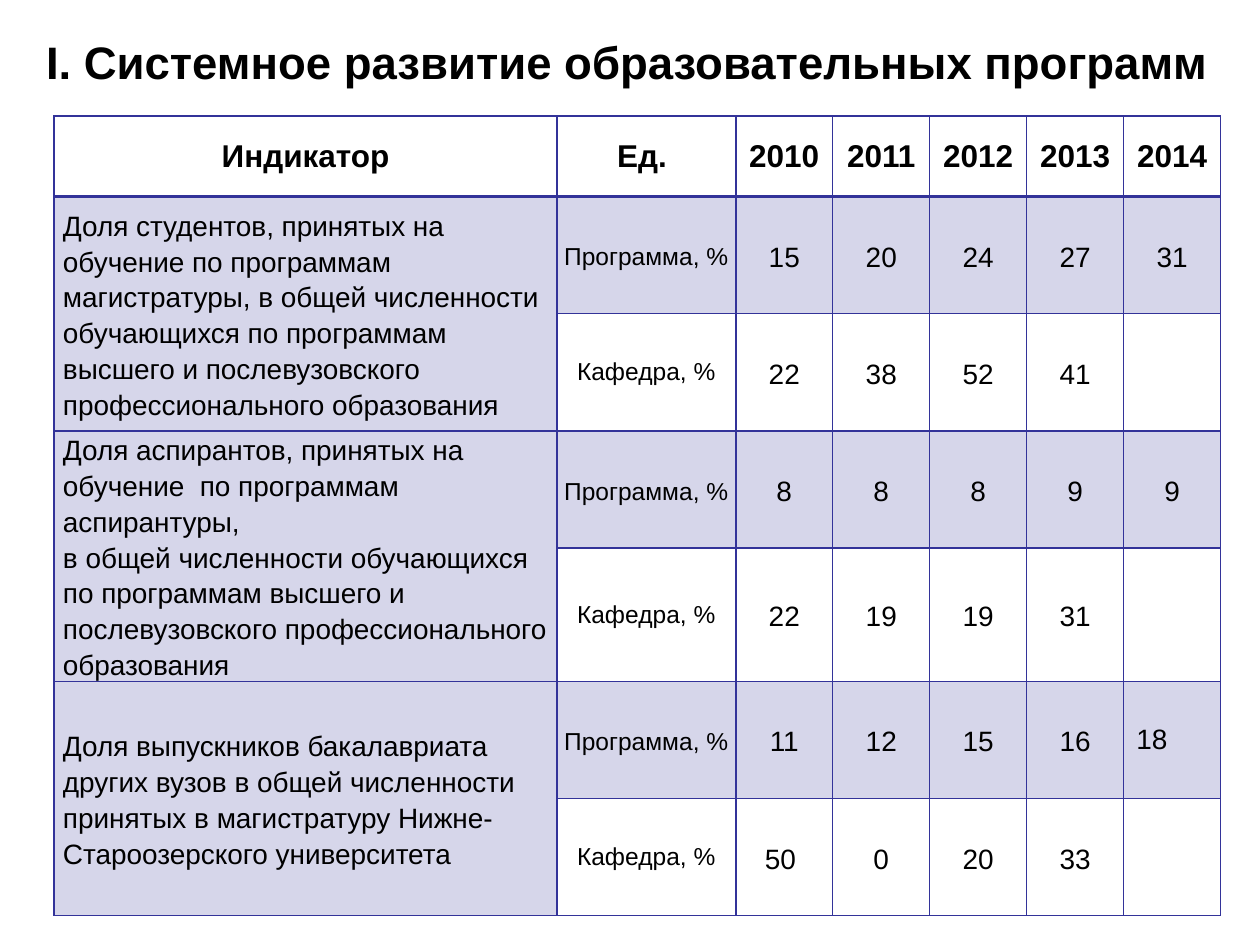
from copy import deepcopy

from lxml import etree
from pptx import Presentation
from pptx.dml.color import RGBColor
from pptx.enum import text as t
from pptx.oxml import ns
from pptx.util import Inches, Pt

BLACK = RGBColor(0x00, 0x00, 0x00)
INDIGO = RGBColor(0x33, 0x33, 0x99)
TINT_ALPHA = 20

TITLE = "I. Системное развитие образовательных программ"
HEADER = ["Индикатор", "Ед. ", "2010", "2011", "2012", "2013", "2014"]
UNITS = ["Программа, %", "Кафедра, %"]
INDICATORS = [
    ("Доля студентов, принятых на обучение по программам магистратуры, "
     "в общей численности обучающихся по программам высшего и "
     "послевузовского профессионального образования",
     [["15", "20", "24", "27", "31"], ["22", "38", "52", "41", ""]]),
    ("Доля аспирантов, принятых на обучение  по программам аспирантуры, \n"
     "в общей численности обучающихся по программам высшего и "
     "послевузовского профессионального образования",
     [["8", "8", "8", "9", "9"], ["22", "19", "19", "31", ""]]),
    ("Доля выпускников бакалавриата других вузов в общей численности "
     "принятых в магистратуру Нижне-Староозерского университета",
     [["11", "12", "15", "16", "18"], ["50 ", "0", "20", "33", ""]]),
]
COLUMNS = [3.99, 1.42] + [0.77] * 5
ROWS = [0.64] + [0.93] * 6

CENTER, LEFT = t.PP_ALIGN.CENTER, t.PP_ALIGN.LEFT
HEADING = dict(size=18, bold=True, align=CENTER, side=0.1, edge=0.05)
INDICATOR = dict(size=16, align=LEFT, spacing=1.15, side=0.07)
VALUE = dict(INDICATOR, align=CENTER)
PROGRAM = dict(VALUE, size=14, side=0.02)
DEPARTMENT = dict(PROGRAM, spacing=None)
LAST_PROGRAM_VALUE = dict(size=16, align=LEFT, side=0.1, edge=0.05)


def write(frame, words, size, bold=False, align=CENTER, spacing=None):
    line = frame.paragraphs[0]
    line.text = words
    line.alignment = align
    line.line_spacing = spacing
    for run in line.runs:
        for name, value in dict(name="Arial", size=Pt(size), bold=bold).items():
            setattr(run.font, name, value)
        run.font.color.rgb = BLACK
    for line_break in line._p.findall(ns.qn("a:br")):
        line_break.insert(0, deepcopy(line.runs[0]._r.rPr))


def draw_borders(cell, under_header, is_header):
    widths = dict(lnL=1, lnR=1, lnT=2 if under_header else 1,
                  lnB=2 if is_header else 1)
    for side, width in widths.items():
        border = etree.SubElement(cell._tc.get_or_add_tcPr(),
                                  ns.qn(f"a:{side}"), w=str(Pt(width)))
        paint = etree.SubElement(border, ns.qn("a:solidFill"))
        etree.SubElement(paint, ns.qn("a:srgbClr"), val=str(INDIGO))


def tint(cell):
    cell.fill.solid()
    cell.fill.fore_color.rgb = INDIGO
    color = cell._tc.tcPr.find(ns.qn("a:solidFill"))[0]
    etree.SubElement(color, ns.qn("a:alpha"), val=str(TINT_ALPHA * 1000))


def fill_cell(cell, words, style):
    style = dict(style)
    side, edge = Inches(style.pop("side")), Inches(style.pop("edge", 0))
    layout = dict(margin_left=side, margin_right=side, margin_top=edge,
                  margin_bottom=edge, vertical_anchor=t.MSO_ANCHOR.MIDDLE)
    for name, value in layout.items():
        setattr(cell, name, value)
    if words:
        write(cell.text_frame, words, **style)


def add_title(slide):
    title = slide.shapes.title
    box = dict(left=0.08, top=0.22, width=9.8, height=0.54)
    for name, value in box.items():
        setattr(title, name, Inches(value))
    frame = title.text_frame
    frame.word_wrap = True
    frame.auto_size = t.MSO_AUTO_SIZE.NONE
    frame.vertical_anchor = t.MSO_ANCHOR.TOP
    write(frame, TITLE, size=26, bold=True)


def add_indicators(slide):
    table = slide.shapes.add_table(
        len(ROWS), len(COLUMNS), Inches(0.43), Inches(0.92),
        Inches(sum(COLUMNS)), Inches(sum(ROWS))).table
    table.first_row = table.horz_banding = False
    for column, width in zip(table.columns, COLUMNS):
        column.width = Inches(width)
    for row, height in zip(table.rows, ROWS):
        row.height = Inches(height)

    for r in range(len(ROWS)):
        for c in range(len(COLUMNS)):
            cell = table.cell(r, c)
            draw_borders(cell, r == 1, r == 0)
            if r and (r % 2 or c == 0):
                tint(cell)
            else:
                cell.fill.background()

    for c, heading in enumerate(HEADER):
        fill_cell(table.cell(0, c), heading, HEADING)
    for i, (indicator, series) in enumerate(INDICATORS):
        top = 1 + 2 * i
        table.cell(top, 0).merge(table.cell(top + 1, 0))
        fill_cell(table.cell(top, 0), indicator, INDICATOR)
        for k, (unit, style) in enumerate(zip(UNITS, (PROGRAM, DEPARTMENT))):
            fill_cell(table.cell(top + k, 1), unit, style)
            for c, value in enumerate(series[k], start=2):
                fill_cell(table.cell(top + k, c), value, VALUE)
    fill_cell(table.cell(5, 6), INDICATORS[-1][1][0][-1], LAST_PROGRAM_VALUE)


def main():
    deck = Presentation()
    deck.slide_width, deck.slide_height = Inches(10), Inches(7.5)
    slide = deck.slides.add_slide(deck.slide_layouts[5])
    add_indicators(slide)
    add_title(slide)
    deck.save("out.pptx")


if __name__ == "__main__":
    main()
